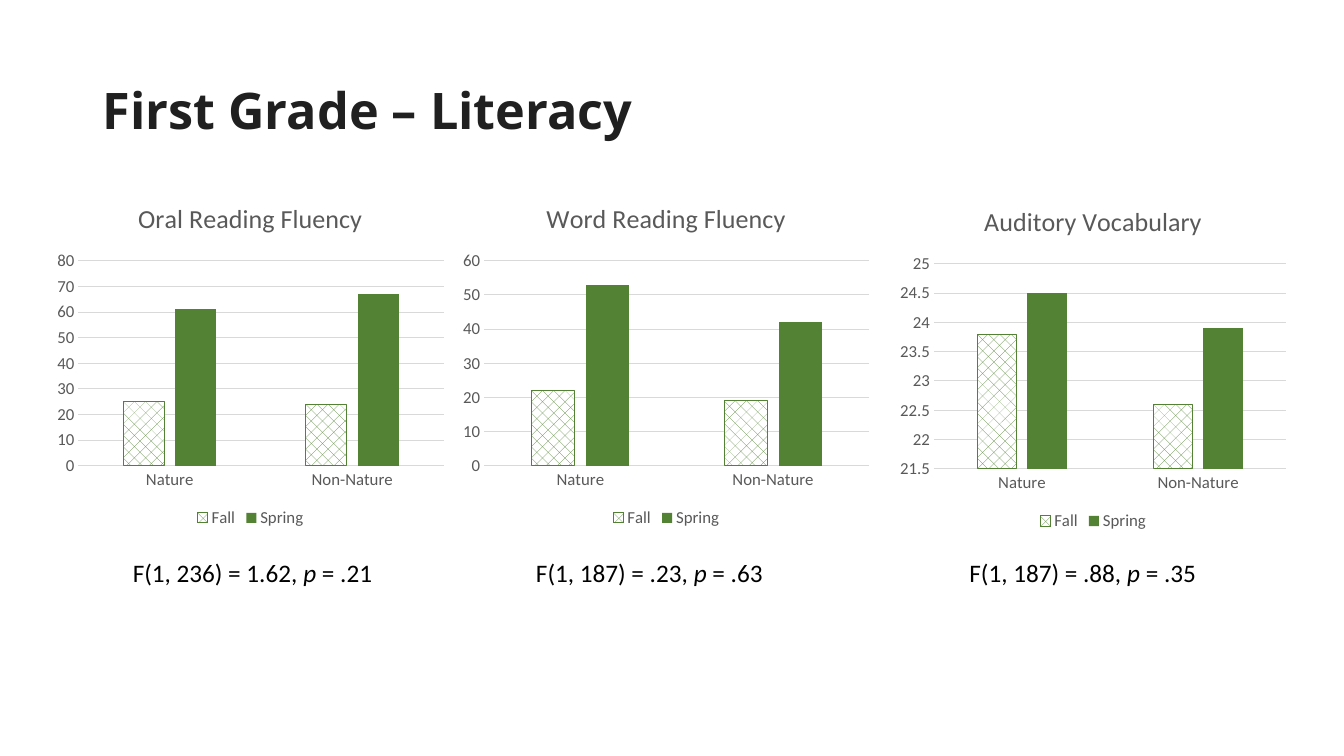
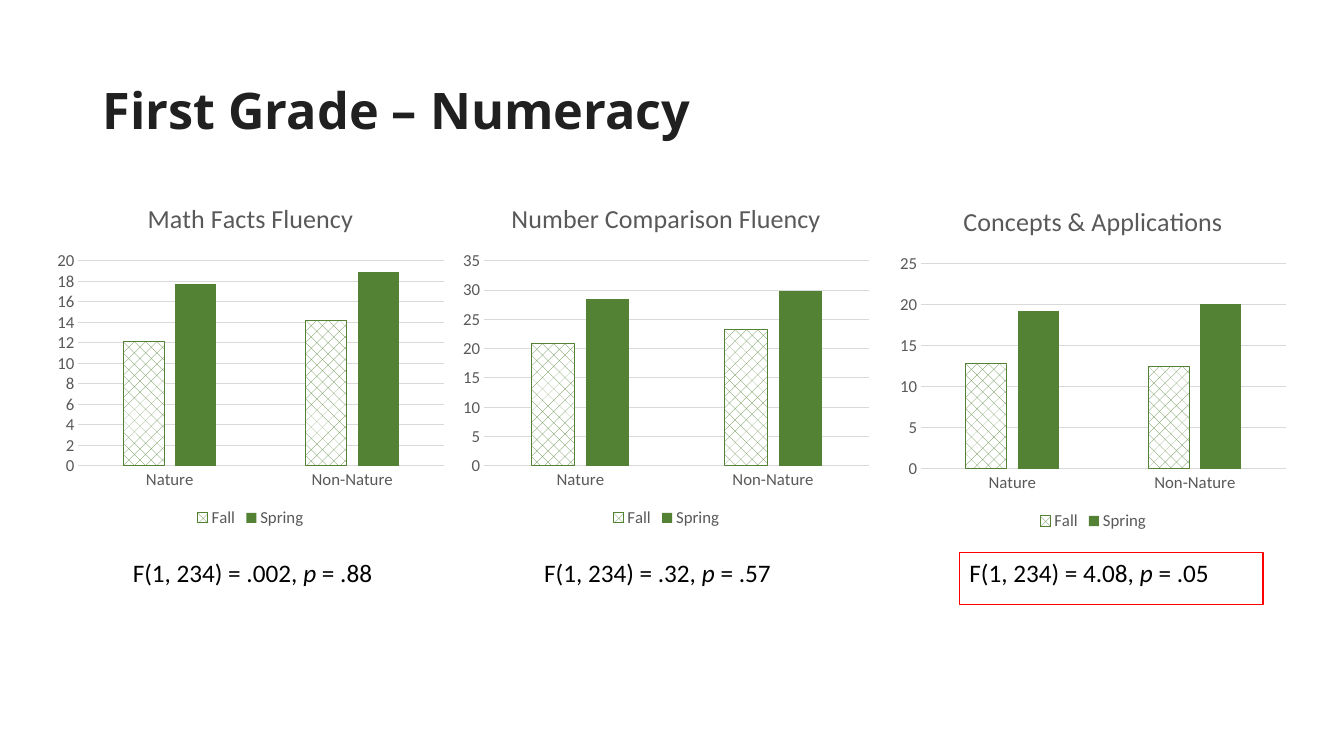
from pptx import Presentation
from pptx.chart.data import CategoryChartData as ChartData
from pptx.dml.color import RGBColor
from pptx.enum.chart import XL_CHART_TYPE as ChartType, XL_LEGEND_POSITION as LegendPosition
from pptx.enum.chart import XL_TICK_MARK as TickMark
from pptx.enum.dml import MSO_PATTERN as Pattern
from pptx.enum.shapes import MSO_SHAPE as Shape
from pptx.enum.text import MSO_ANCHOR as Anchor, MSO_AUTO_SIZE as AutoSize
from pptx.util import Pt

CHART_FRAMES = [(35.3, 131, 287.3), (324.7, 131, 302.4), (637.2, 133.2, 287.3)]
CHART_HEIGHT = 249
CAPTION_TOP = 394.6

SLIDES = [
    ("First Grade – Literacy", [
        ("Oral Reading Fluency", (25, 24), (61, 67), 87.8, "F(1, 236) = 1.62, ", "= .21"),
        ("Word Reading Fluency", (22, 19), (53, 42), 375.8, "F(1, 187) = .23, ", "= .63"),
        ("Auditory Vocabulary", (23.8, 22.6), (24.5, 23.9), 685.4, "F(1, 187) = .88, ", "= .35"),
    ]),
    ("First Grade – Numeracy", [
        ("Math Facts Fluency", (12.1, 14.2), (17.7, 18.9), 87.8, "F(1, 234) = .002, ", "= .88"),
        ("Number Comparison Fluency", (20.8, 23.2), (28.5, 29.9), 381.6, "F(1, 234) = .32, ", "= .57"),
        ("Concepts & Applications", (12.8, 12.5), (19.3, 20.1), 685.4, "F(1, 234) = 4.08, ", "= .05"),
    ]),
]


def color(value):
    return RGBColor.from_string(value)


def add_text(para, text, size=18, font="Calibri", fill="000000", bold=False, italic=False):
    span = para.add_run()
    span.text = text
    span.font.size = Pt(size)
    span.font.name = font
    span.font.bold = bold
    span.font.italic = italic
    span.font.color.rgb = color(fill)


class ResultsDeck:
    """Holds the shared style and the slide being built."""

    green = "548235"
    gray = "595959"
    rule = "D9D9D9"
    red = "FF0000"

    def __init__(self):
        self.deck = Presentation()
        self.deck.slide_width = Pt(960)
        self.deck.slide_height = Pt(540)
        self.page = None

    def add_page(self, title):
        self.page = self.deck.slides.add_slide(self.deck.slide_layouts[6])
        para = self.add_box(66.24, 28.8, 828, 104.4, Anchor.MIDDLE)
        para.line_spacing = 0.9
        add_text(para, title, size=36, font="Open Sans", fill="202020", bold=True)

    def add_box(self, left, top, width, height, anchor=Anchor.TOP):
        box = self.page.shapes.add_textbox(Pt(left), Pt(top), Pt(width), Pt(height))
        box.text_frame.word_wrap = True
        box.text_frame.vertical_anchor = anchor
        return box.text_frame.paragraphs[0]

    def add_caption(self, left, statistic, probability):
        para = self.add_box(left, CAPTION_TOP, 260, 29)
        add_text(para, statistic)
        add_text(para, "p ", italic=True)
        add_text(para, probability)

    def add_highlight(self, left, top, width, height):
        frame = self.page.shapes.add_shape(Shape.RECTANGLE, Pt(left), Pt(top), Pt(width), Pt(height))
        frame.shadow.inherit = False
        frame.fill.background()
        frame.line.color.rgb = color(self.red)
        frame.line.width = Pt(1)

    def style_line(self, line, fill):
        line.color.rgb = color(fill)
        line.width = Pt(0.75)

    def style_font(self, font, size=12):
        font.size = Pt(size)
        font.name = "Calibri"
        font.color.rgb = color(self.gray)

    def add_chart(self, frame, title, fall, spring):
        left, top, width = frame
        data = ChartData()
        data.categories = ["Nature", "Non-Nature"]
        data.add_series("Fall", fall)
        data.add_series("Spring", spring)
        chart = self.page.shapes.add_chart(
            ChartType.COLUMN_CLUSTERED, Pt(left), Pt(top), Pt(width), Pt(CHART_HEIGHT), data).chart
        self.style_font(chart.font, 10)
        chart.has_title = True
        add_text(chart.chart_title.text_frame.paragraphs[0], title, size=18.6, fill=self.gray)
        chart.has_legend = True
        chart.legend.position = LegendPosition.BOTTOM
        chart.legend.include_in_layout = False
        self.style_font(chart.legend.font)
        for axis in (chart.category_axis, chart.value_axis):
            axis.major_tick_mark = TickMark.NONE
            axis.minor_tick_mark = TickMark.NONE
            self.style_font(axis.tick_labels.font)
        self.style_line(chart.category_axis.format.line, self.rule)
        chart.value_axis.format.line.fill.background()
        self.style_line(chart.value_axis.major_gridlines.format.line, self.rule)
        self.style_columns(chart.plots[0])

    def style_columns(self, plot):
        plot.vary_by_categories = False
        plot.gap_width = 219
        plot.overlap = -27
        fall, spring = plot.series
        fall.format.fill.patterned()
        fall.format.fill.pattern = Pattern.PERCENT_25
        fall.format.fill.fore_color.rgb = color(self.green)
        fall.format.fill.back_color.rgb = color("FFFFFF")
        self.style_line(fall.format.line, self.green)
        spring.format.fill.solid()
        spring.format.fill.fore_color.rgb = color(self.green)


def main():
    results = ResultsDeck()
    for heading, measures in SLIDES:
        results.add_page(heading)
        for frame, measure in zip(CHART_FRAMES, measures):
            title, fall, spring, caption_left, statistic, probability = measure
            results.add_chart(frame, title, fall, spring)
            results.add_caption(caption_left, statistic, probability)
    results.add_highlight(685.4, CAPTION_TOP, 216.7, 37.4)
    results.deck.save("out.pptx")


if __name__ == "__main__":
    main()
